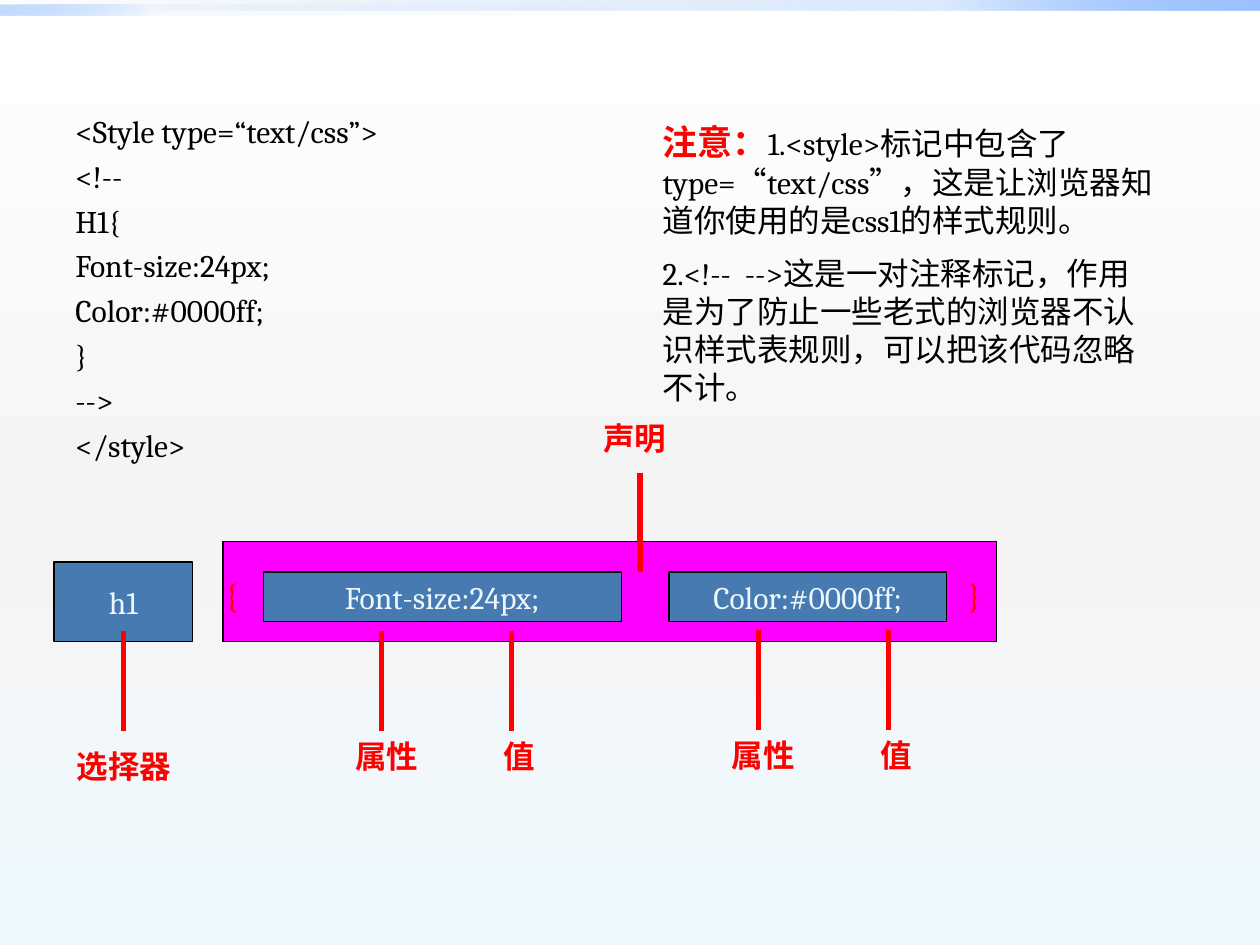
from typing import NamedTuple, Optional

from lxml import etree
from pptx import Presentation
from pptx.dml.color import RGBColor
from pptx.enum.shapes import MSO_CONNECTOR, MSO_SHAPE
from pptx.enum.text import MSO_ANCHOR, MSO_AUTO_SIZE, PP_ALIGN
from pptx.oxml.ns import qn
from pptx.util import Inches, Pt

RECTANGLE = MSO_SHAPE.RECTANGLE
PROCESS = MSO_SHAPE.FLOWCHART_PROCESS
STRAIGHT = MSO_CONNECTOR.STRAIGHT
MIDDLE = MSO_ANCHOR.MIDDLE
CENTER = PP_ALIGN.CENTER
LEFT = PP_ALIGN.LEFT
FIT_SHAPE = MSO_AUTO_SIZE.SHAPE_TO_FIT_TEXT
NO_FIT = MSO_AUTO_SIZE.NONE

BLACK = RGBColor(0x00, 0x00, 0x00)
RED = RGBColor(0xFF, 0x00, 0x00)
MAGENTA = RGBColor(0xFF, 0x00, 0xFF)
STEEL_BLUE = RGBColor(0x47, 0x7A, 0xB1)
PALE_BLUE = RGBColor(0xED, 0xF8, 0xFE)
WHITE = RGBColor(0xFF, 0xFF, 0xFF)
LIGHT_GREY = RGBColor(0xF4, 0xF4, 0xF4)
ICE_BLUE = RGBColor(0xEE, 0xF9, 0xFF)
BAR_DARK = RGBColor(0x00, 0x58, 0xB7)
BAR_MIDDLE = RGBColor(0x4F, 0x95, 0xFF)
BAR_LIGHT = RGBColor(0x9E, 0xC2, 0xFF)

SLIDE_WIDTH, SLIDE_HEIGHT = Inches(10), Inches(7.5)
COLUMN, ROW = SLIDE_WIDTH / 100, SLIDE_HEIGHT / 75
CALLOUT_LENGTH = 7.9


class Area(NamedTuple):
    """Place on the slide, in grid columns and rows."""
    left: float
    top: float
    width: float
    height: float

    def lengths(self) -> tuple:
        return (round(self.left * COLUMN), round(self.top * ROW),
                round(self.width * COLUMN), round(self.height * ROW))


class Stop(NamedTuple):
    position: int
    color: RGBColor
    opacity: int = 100


class Run(NamedTuple):
    text: str
    size: int = 18
    color: RGBColor = BLACK
    font: str = "Cambria"
    bold: bool = False


class Box(NamedTuple):
    area: Area
    fill: RGBColor
    text: str = ""


class Callout(NamedTuple):
    column: float
    line_top: float
    label: str
    label_area: Area


CODE = ["<Style type=“text/css”>", "<!--", "H1{", "Font-size:24px;",
        "Color:#0000ff;", "}", "-->", "</style>"]

NOTES = [
    [Run("注意：", 20, RED, bold=True),
     Run("1.<style>标记中包含了type="), Run("“", font="Arial"),
     Run("text/css"), Run("”", font="Arial"),
     Run("，这是让浏览器知道你使用的是css1的样式规则。")],
    [Run("2.<!--  -->这是一对注释标记，作用是为了防止一些老式的浏览器"
         "不认识样式表规则，可以把该代码忽略不计。")],
]

BOXES = [
    Box(Area(4.3, 44.6, 11, 6.3), STEEL_BLUE, "h1"),
    Box(Area(17.7, 43, 61.4, 7.9), MAGENTA),
    Box(Area(20.9, 45.4, 28.4, 3.9), STEEL_BLUE, "Font-size:24px;"),
    Box(Area(53.1, 45.4, 22, 3.9), STEEL_BLUE, "Color:#0000ff;"),
]


def property_and_value(column: float, top: float) -> list[Callout]:
    value_column, label_top = column + 10.3, top + CALLOUT_LENGTH
    return [
        Callout(column, top, "属性", Area(column - 3.1, label_top, 7, 4)),
        Callout(value_column, top, "值",
                Area(value_column - 1.6, label_top, 4.5, 4)),
    ]


CALLOUTS = [
    Callout(9.8, 50.1, "选择器", Area(5.1, 58.8, 9.6, 4)),
    *property_and_value(30.3, 50.1),
    *property_and_value(60.2, 50),
    Callout(50.8, 37.5, "声明", Area(46.9, 32.8, 7, 4)),
]


def fill_gradient(fill, holder, angle: int, stops: list[Stop]) -> None:
    """Give a fill any number of stops; the angle runs clockwise."""
    fill.gradient()
    fill.gradient_angle = (360 - angle) % 360
    stop_list = next(holder.iter(qn("a:gsLst")))
    for old_stop in list(stop_list):
        stop_list.remove(old_stop)
    for stop in stops:
        element = etree.SubElement(stop_list, qn("a:gs"),
                                   pos=str(stop.position * 1000))
        color = etree.SubElement(element, qn("a:srgbClr"), val=str(stop.color))
        if stop.opacity < 100:
            etree.SubElement(color, qn("a:alpha"), val=str(stop.opacity * 1000))


def write_text(shape, paragraphs: list[list[Run]], *, gap: float = 0,
               align: PP_ALIGN = LEFT, wrap: bool = False,
               anchor: Optional[MSO_ANCHOR] = None,
               auto_size: MSO_AUTO_SIZE = NO_FIT) -> None:
    frame = shape.text_frame
    frame.word_wrap = wrap
    frame.auto_size = auto_size
    if anchor is not None:
        frame.vertical_anchor = anchor
    for index, runs in enumerate(paragraphs):
        paragraph = frame.add_paragraph() if index else frame.paragraphs[0]
        paragraph.alignment = align
        paragraph.space_before = Pt(gap if index else 0)
        for item in runs:
            run = paragraph.add_run()
            run.text = item.text
            run.font.size = Pt(item.size)
            run.font.name = item.font
            run.font.bold = item.bold
            run.font.color.rgb = item.color


def add_text(slide, area: Area, paragraphs: list[list[Run]], **text_format) -> None:
    write_text(slide.shapes.add_textbox(*area.lengths()), paragraphs, **text_format)


def add_bar(slide, area: Area, angle: int, stops: list[Stop]) -> None:
    bar = slide.shapes.add_shape(RECTANGLE, *area.lengths())
    bar.shadow.inherit = False
    bar.line.fill.background()
    fill_gradient(bar.fill, bar.element, angle, stops)


def add_box(slide, box: Box) -> None:
    shape = slide.shapes.add_shape(PROCESS, *box.area.lengths())
    shape.shadow.inherit = False
    shape.fill.solid()
    shape.fill.fore_color.rgb = box.fill
    shape.line.color.rgb = BLACK
    shape.line.width = Pt(0.75)
    if box.text:
        write_text(shape, [[Run(box.text, color=PALE_BLUE)]],
                   align=CENTER, anchor=MIDDLE)


def add_callout(slide, callout: Callout) -> None:
    x, top = round(callout.column * COLUMN), callout.line_top
    line = slide.shapes.add_connector(
        STRAIGHT, x, round(top * ROW), x, round((top + CALLOUT_LENGTH) * ROW))
    line.line.color.rgb = RED
    line.line.width = Pt(3)
    etree.SubElement(line.element.spPr, qn("a:effectLst"))
    add_text(slide, callout.label_area,
             [[Run(callout.label, color=RED, bold=True)]], auto_size=FIT_SHAPE)


def main() -> None:
    presentation = Presentation()
    presentation.slide_width, presentation.slide_height = SLIDE_WIDTH, SLIDE_HEIGHT
    slide = presentation.slides.add_slide(presentation.slide_layouts[6])
    fill_gradient(slide.background.fill, slide.element, 90,
                  [Stop(0, WHITE), Stop(55, LIGHT_GREY), Stop(100, ICE_BLUE)])
    add_bar(slide, Area(0, 0, 100, 0.8), 315,
            [Stop(0, BAR_DARK, 0), Stop(75, BAR_MIDDLE, 20), Stop(100, BAR_LIGHT)])
    add_bar(slide, Area(0, 0.4, 50, 0.8), 135,
            [Stop(0, BAR_DARK, 0), Stop(75, BAR_MIDDLE, 5), Stop(100, BAR_LIGHT, 60)])

    add_text(slide, Area(5, 8.4, 90, 58.7), [[Run(line)] for line in CODE],
             gap=4, wrap=True)
    for box in BOXES:
        add_box(slide, box)
    for brace, column in (("{", 16.9), ("}", 75.8)):
        add_text(slide, Area(column, 45, 3.7, 4.3), [[Run(brace, 20, RED)]],
                 auto_size=FIT_SHAPE)
    for callout in CALLOUTS:
        add_callout(slide, callout)
    add_text(slide, Area(51.6, 9.1, 40.9, 23.9), NOTES, gap=9, wrap=True,
             auto_size=FIT_SHAPE)
    presentation.save("out.pptx")


if __name__ == "__main__":
    main()
